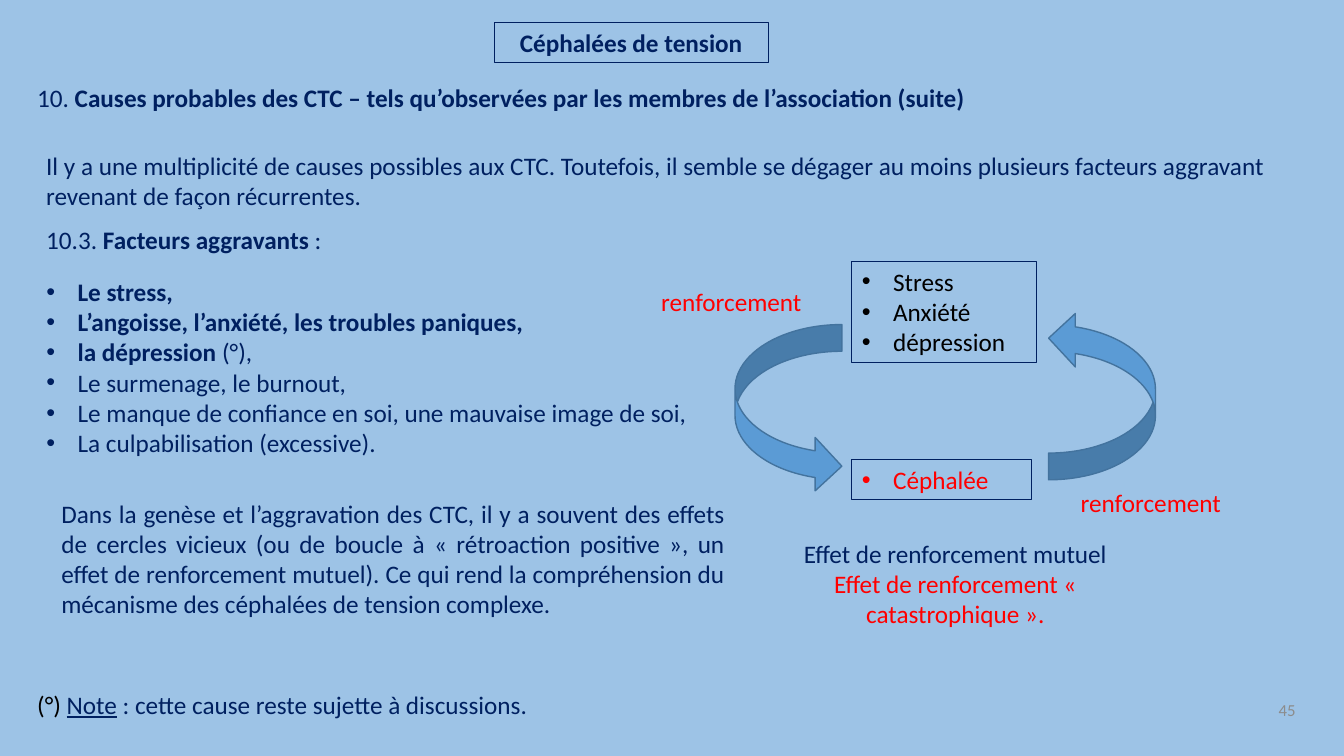
from dataclasses import dataclass

from lxml.etree import SubElement
from pptx import Presentation
from pptx.dml.color import RGBColor
from pptx.enum.shapes import MSO_SHAPE
from pptx.enum.text import MSO_ANCHOR, MSO_AUTO_SIZE, PP_ALIGN
from pptx.oxml.ns import qn
from pptx.util import Inches, Pt


@dataclass(frozen=True)
class Theme:
    background: str = "9DC3E6"
    navy: str = "002060"
    red: str = "FF0000"
    black: str = "000000"
    grey: str = "8C8C8C"
    arrow_fill: str = "5B9BD5"
    arrow_line: str = "43739E"
    font: str = "Calibri"
    text_size: int = 18
    number_size: int = 12
    bullet_indent: float = 0.31


THEME = Theme()
BOLD = {"bold": True}
RED = {"color": THEME.red}


def set_attributes(target, values):
    for name, value in values.items():
        setattr(target, name, value)


class SlideBuilder:
    def __init__(self, slide, theme):
        self.slide = slide
        self.theme = theme
        slide.background.fill.solid()
        slide.background.fill.fore_color.rgb = RGBColor.from_string(theme.background)

    def place(self, shape, box):
        names = ("left", "top", "width", "height")
        set_attributes(shape, dict(zip(names, map(Inches, box))))

    def outline(self, shape, color, width):
        shape.line.color.rgb = RGBColor.from_string(color)
        shape.line.width = Pt(width)

    def add_bullet(self, paragraph):
        properties = paragraph._p.get_or_add_pPr()
        indent = Inches(self.theme.bullet_indent)
        properties.set("marL", str(indent))
        properties.set("indent", str(-indent))
        SubElement(properties, qn("a:buFont")).set("typeface", "Arial")
        SubElement(properties, qn("a:buChar")).set("char", "•")

    def set_text(self, shape, paragraphs, color=None, size=None, align=PP_ALIGN.LEFT,
                 bullets=False, wrap=True, anchor=MSO_ANCHOR.TOP):
        """Each paragraph is a list of (text, format) runs."""
        frame = shape.text_frame
        set_attributes(frame, {
            "word_wrap": wrap, "auto_size": MSO_AUTO_SIZE.NONE, "vertical_anchor": anchor,
            "margin_left": Inches(0.1), "margin_right": Inches(0.1),
            "margin_top": Inches(0.05), "margin_bottom": Inches(0.05)})
        for index, runs in enumerate(paragraphs):
            paragraph = frame.add_paragraph() if index else frame.paragraphs[0]
            set_attributes(paragraph, {"alignment": align, "line_spacing": 1.0,
                                       "space_before": Pt(0), "space_after": Pt(0)})
            if bullets:
                self.add_bullet(paragraph)
            for text, changes in runs:
                run = paragraph.add_run()
                run.text = text
                values = {"name": self.theme.font, "bold": False,
                          "size": Pt(size or self.theme.text_size)} | changes
                run_color = values.pop("color", color or self.theme.navy)
                set_attributes(run.font, values)
                run.font.color.rgb = RGBColor.from_string(run_color)

    def title(self, box, text):
        shape = self.slide.shapes.title
        self.place(shape, box)
        self.outline(shape, self.theme.navy, 0.75)
        self.set_text(shape, [[(text, BOLD)]], align=PP_ALIGN.CENTER)

    def body_list(self, box, paragraphs):
        shape = self.slide.placeholders[1]
        self.place(shape, box)
        self.set_text(shape, paragraphs, bullets=True)

    def text(self, box, paragraphs, **style):
        shape = self.slide.shapes.add_textbox(*map(Inches, box))
        self.set_text(shape, paragraphs, **style)

    def shape(self, kind, box, line, width, fill=None, rotation=0):
        shape = self.slide.shapes.add_shape(kind, *map(Inches, box))
        shape.shadow.inherit = False
        shape.rotation = rotation
        self.outline(shape, line, width)
        if fill:
            shape.fill.solid()
            shape.fill.fore_color.rgb = RGBColor.from_string(fill)
        else:
            shape.fill.background()
        return shape

    def boxed_list(self, box, items, color):
        shape = self.shape(MSO_SHAPE.RECTANGLE, box, self.theme.navy, 0.75)
        self.set_text(shape, [[(item, {})] for item in items], color=color, bullets=True)

    def loop_arrow(self, box, rotation):
        self.shape(MSO_SHAPE.CURVED_RIGHT_ARROW, box, self.theme.arrow_line, 1,
                   self.theme.arrow_fill, rotation)


def main():
    presentation = Presentation()
    presentation.slide_width = Inches(13.33)
    presentation.slide_height = Inches(7.5)
    slide = presentation.slides.add_slide(presentation.slide_layouts[1])
    builder = SlideBuilder(slide, THEME)

    # Headings and introduction
    builder.title((4.9, 0.22, 2.72, 0.4), "Céphalées de tension")
    builder.text((0.27, 0.77, 9.47, 0.4), [[
        ("10.", {}),
        (" Causes probables des CTC – tels qu’observées par les membres"
         " de l’association (suite)", BOLD)]])
    builder.text((0.36, 1.44, 12.46, 0.71), [[
        ("Il y a une multiplicité de causes possibles aux CTC. Toutefois, il semble se"
         " dégager au moins plusieurs facteurs aggravant revenant de façon récurrentes.", {})]])
    builder.text((0.36, 2.18, 7.35, 0.4), [[
        ("10.3. ", {}), ("Facteurs aggravants ", BOLD), (":", {})]])

    # Aggravating factors
    builder.body_list((0.36, 2.69, 7.1, 1.92), [
        [("Le stress,", BOLD)],
        [("L’angoisse, l’anxiété, les troubles paniques,", BOLD)],
        [("la dépression ", BOLD), ("(°),", {})],
        [("Le surmenage, le burnout,", {})],
        [("Le manque de confiance en soi, une mauvaise image de soi,", {})],
        [("La culpabilisation (excessive).", {})]])
    builder.text((0.51, 4.89, 6.78, 1.31), [[
        ("Dans la genèse et l’aggravation des CTC, il y a souvent des effets de cercles"
         " vicieux (ou de boucle à « rétroaction positive », un effet de renforcement"
         " mutuel). Ce qui rend la compréhension du mécanisme des céphalées de tension"
         " complexe.", {})]], align=PP_ALIGN.JUSTIFY)

    # Reinforcement loop
    builder.boxed_list((8.45, 2.59, 1.83, 1.01), ["Stress", "Anxiété", "dépression"],
                       THEME.black)
    builder.boxed_list((8.45, 4.56, 1.78, 0.4), ["Céphalée"], THEME.red)
    for left, top, rotation in ((7.29, 3.22, 0), (10.4, 3.09, 180)):
        builder.loop_arrow((left, top, 1.06, 1.67), rotation)
    for left, top in ((6.46, 2.79), (10.62, 4.79)):
        builder.text((left, top, 1.67, 0.4), [[("renforcement", RED)]], wrap=False)
    builder.text((7.82, 5.29, 3.31, 1.01), [
        [("Effet de renforcement mutuel", {})],
        [("Effet de renforcement « catastrophique ».", RED)]], align=PP_ALIGN.CENTER)

    # Note and slide number
    builder.text((0.27, 6.79, 5.68, 0.4), [[
        ("(°) ", {"color": THEME.black}), ("Note", {"underline": True}),
        (" : cette cause reste sujette à discussions.", {})]])
    builder.text((12.28, 6.85, 0.67, 0.39), [[("45", {})]], color=THEME.grey,
                 size=THEME.number_size, align=PP_ALIGN.RIGHT, anchor=MSO_ANCHOR.MIDDLE)

    presentation.save("out.pptx")


if __name__ == "__main__":
    main()
